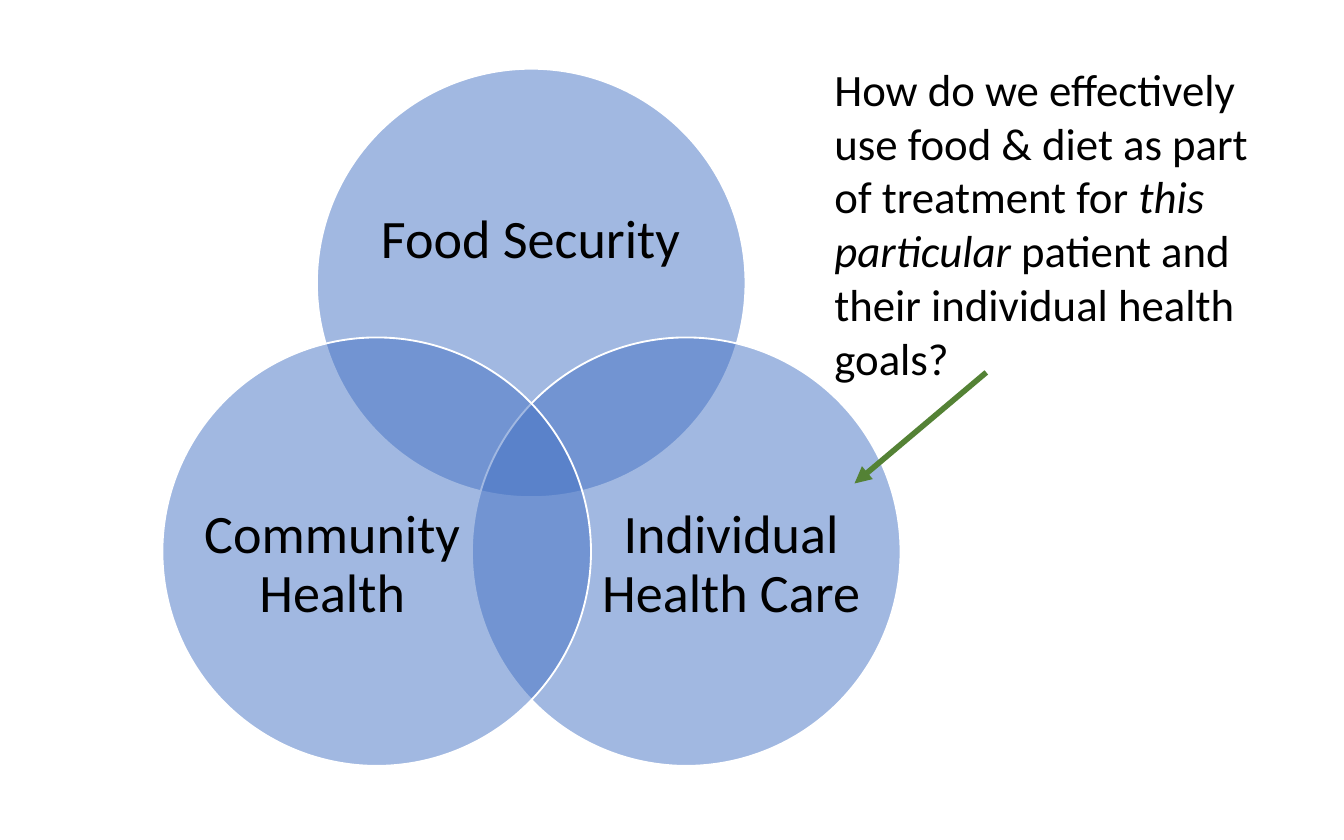
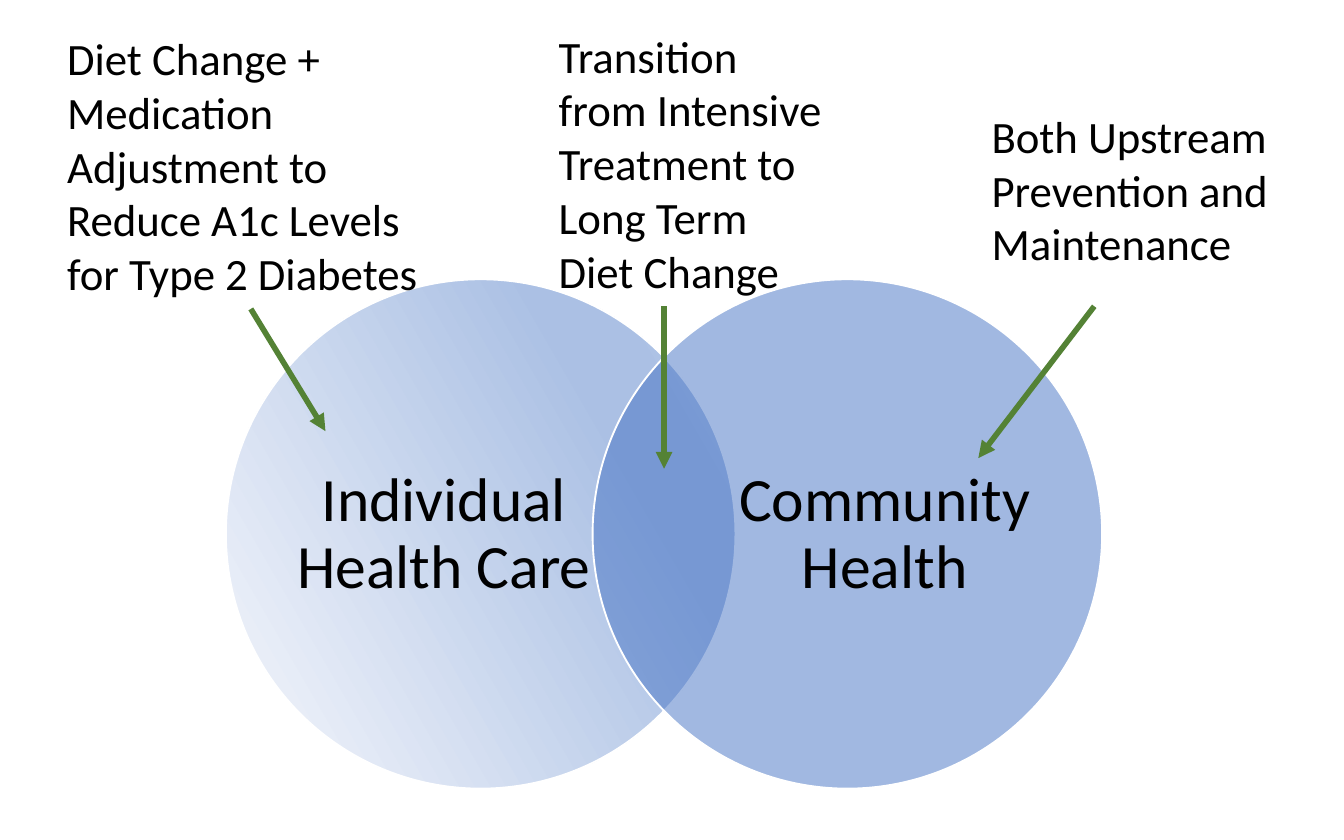
from lxml import etree
from pptx import Presentation
from pptx.dml.color import RGBColor
from pptx.enum.shapes import MSO_CONNECTOR, MSO_SHAPE
from pptx.enum.text import MSO_ANCHOR, MSO_AUTO_SIZE, PP_ALIGN
from pptx.oxml import parse_xml
from pptx.oxml.ns import nsdecls, qn
from pptx.util import Cm, Pt

OVAL = MSO_SHAPE.OVAL
LINE = MSO_CONNECTOR.STRAIGHT
MIDDLE = MSO_ANCHOR.MIDDLE
GROW = MSO_AUTO_SIZE.SHAPE_TO_FIT_TEXT
CENTER = PP_ALIGN.CENTER
BOTTOM = 2

FONT = "Calibri"
COLORS = {
    "circle": "4472C4",
    "edge": "FFFFFF",
    "text": "000000",
    "arrow": "548235",
    "pale": "F6F8FC",
    "mid": "ABC0E4",
    "soft": "C7D5ED",
}
FADE = [(0, "pale"), (74, "mid"), (83, "mid"), (100, "soft")]
FADE_ANGLE = 330


def color(name):
    return RGBColor.from_string(COLORS[name])


def style(para, size):
    para.font.name = FONT
    para.font.size = Pt(size)
    para.font.color.rgb = color("text")


def add_circle(slide, left, top, size):
    circle = slide.shapes.add_shape(OVAL, Cm(left), Cm(top), Cm(size), Cm(size))
    circle.shadow.inherit = False
    circle.fill.solid()
    circle.fill.fore_color.rgb = color("circle")
    tint = circle._element.spPr.find(qn("a:solidFill"))[0]
    etree.SubElement(tint, qn("a:alpha"), val="50000")
    circle.line.color.rgb = color("edge")
    circle.line.width = Pt(1)
    return circle


def fade(circle):
    stops = "".join(
        f'<a:gs pos="{pos * 1000}"><a:srgbClr val="{COLORS[name]}"/></a:gs>'
        for pos, name in FADE
    )
    grad = parse_xml(
        f'<a:gradFill {nsdecls("a")} rotWithShape="1"><a:gsLst>{stops}</a:gsLst>'
        f'<a:lin ang="{FADE_ANGLE * 60000}" scaled="0"/></a:gradFill>'
    )
    props = circle._element.spPr
    props.replace(props.find(qn("a:solidFill")), grad)


def add_label(slide, text, box, size):
    label = slide.shapes.add_textbox(*map(Cm, box))
    frame = label.text_frame
    frame.word_wrap = True
    frame.vertical_anchor = MIDDLE
    frame.margin_left = frame.margin_right = 0
    frame.margin_top = frame.margin_bottom = 0
    para = frame.paragraphs[0]
    para.text = text
    para.alignment = CENTER
    para.line_spacing = 0.9
    style(para, size)


def add_note(slide, box, *parts):
    note = slide.shapes.add_textbox(*map(Cm, box))
    frame = note.text_frame
    frame.word_wrap = True
    frame.auto_size = GROW
    para = frame.paragraphs[0]
    style(para, 24)
    for index, part in enumerate(parts):
        run = para.add_run()
        run.text = part
        if index % 2:
            run.font.italic = True
    return note


def add_arrow(slide, start, end):
    arrow = slide.shapes.add_connector(LINE, *map(Cm, start + end))
    arrow.line.color.rgb = color("arrow")
    arrow.line.width = Pt(3)
    etree.SubElement(arrow.line._get_or_add_ln(), qn("a:tailEnd"), type="triangle")
    etree.SubElement(arrow._element.spPr, qn("a:effectLst"))
    return arrow


def build_trio(slide):
    size, top, low = 8.1, 1.3, 6.38
    wide, high, label_top = 4.88, 4.47, 8.46
    add_circle(slide, 5.99, top, size)
    add_label(slide, "Food Security", (7.06, 2.72, 5.94, 3.66), 29)
    for left, label_left, text in (
        (8.92, 11.38, "Individual Health Care"),
        (3.07, 3.84, "Community Health"),
    ):
        add_circle(slide, left, low, size)
        add_label(slide, text, (label_left, label_top, wide, high), 29)
    add_arrow(slide, (18.64, 7.04), (16.15, 9.14))
    add_note(
        slide,
        (15.52, 1.04, 8.51, 6.4),
        "How do we effectively use food & diet as part of treatment for ",
        "this particular ",
        "patient and their individual health goals?",
    )


def build_pair(slide):
    size, top = 9.63, 5.28
    wide, high, label_top = 5.56, 7.37, 6.43
    fade(add_circle(slide, 4.27, top, size))
    add_label(slide, "Individual Health Care", (5.61, label_top, wide, high), 33)
    add_circle(slide, 11.2, top, size)
    add_label(slide, "Community Health", (13.94, label_top, wide, high), 33)

    diet = add_note(
        slide,
        (1.02, 0.46, 7.44, 5.38),
        "Diet Change + Medication Adjustment to Reduce A1c Levels for Type 2 Diabetes",
    )
    add_arrow(slide, (4.72, 5.84), (6.15, 8.15)).begin_connect(diet, BOTTOM)
    add_note(
        slide,
        (10.31, 0.41, 5.66, 5.38),
        "Transition from Intensive Treatment to Long Term Diet Change",
    )
    add_arrow(slide, (12.55, 5.79), (12.55, 8.86))
    add_note(
        slide,
        (18.49, 1.93, 6.22, 3.33),
        "Both Upstream Prevention and Maintenance",
    )
    add_arrow(slide, (20.68, 5.79), (18.49, 8.66))


def main():
    deck = Presentation()
    deck.slide_width = Cm(25.4)
    deck.slide_height = Cm(15.88)
    blank = deck.slide_layouts[6]
    for build in (build_trio, build_pair):
        build(deck.slides.add_slide(blank))
    deck.save("out.pptx")


if __name__ == "__main__":
    main()
